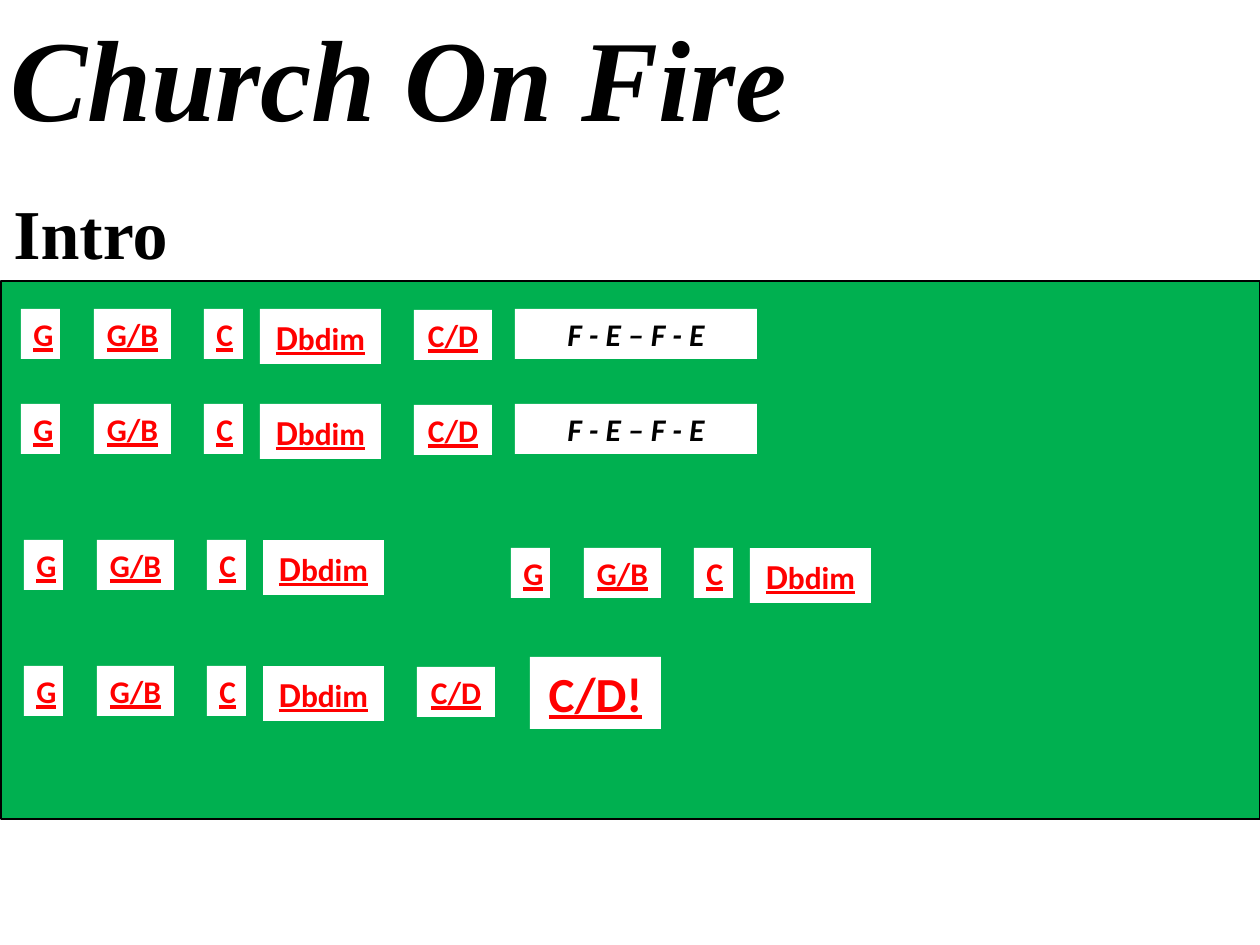
"""Build the chord chart slide for the intro of Church On Fire."""
from dataclasses import dataclass

from pptx import Presentation
from pptx import util as u
from pptx.dml.color import RGBColor
from pptx.enum import shapes, text


@dataclass(frozen=True)
class Theme:
    white: str = "FFFFFF"
    black: str = "000000"
    red: str = "FF0000"
    green: str = "00B050"
    heading_font: str = "Times New Roman"
    chord_font: str = "Calibri"
    title: int = 66
    section: int = 40
    accent: int = 28
    root: int = 20
    chord: int = 18


THEME = Theme()
EMU_PER_PX = 914400 / 126
SLIDE = (1260, 945)
PANEL = (1, 281, 1259, 538)
HEADINGS = [
    ("Church On Fire", (-2, 0, 1000, 152), THEME.title, True),
    ("Intro", (1, 183, 420, 97), THEME.section, False),
]
CHORDS = {
    "G": (0, 0, 39, 50),
    "G/B": (73, 0, 77, 50),
    "C": (183, 0, 39, 50),
    "Dbdim": (239, 0, 121, 55),
    "C/D": (393, 1, 78, 50),
    "F - E – F - E": (494, 0, 242, 50),
    "C/D!": (506, -9, 131, 72),
}
RUN_DOWN = "F - E – F - E"
PHRASE = ["G", "G/B", "C", "Dbdim"]
ROWS = [
    (21, 309, PHRASE + ["C/D", RUN_DOWN]),
    (21, 404, PHRASE + ["C/D", RUN_DOWN]),
    (24, 540, PHRASE),
    (511, 548, PHRASE),
    (24, 666, PHRASE + ["C/D", "C/D!"]),
]


def px(value):
    return u.Emu(round(value * EMU_PER_PX))


def add_box(slide, box, fill):
    shape = slide.shapes.add_shape(shapes.MSO_SHAPE.RECTANGLE, *map(px, box))
    shape.shadow.inherit = False
    shape.fill.solid()
    shape.fill.fore_color.rgb = RGBColor.from_string(fill)
    shape.line.fill.background()
    return shape


def add_label(slide, box, parts, font_name, color, align, italic=False, underline=False):
    frame = add_box(slide, box, THEME.white).text_frame
    frame.word_wrap = True
    frame.auto_size = text.MSO_AUTO_SIZE.SHAPE_TO_FIT_TEXT
    frame.vertical_anchor = text.MSO_ANCHOR.TOP
    paragraph = frame.paragraphs[0]
    paragraph.alignment = align
    for words, size in parts:
        run = paragraph.add_run()
        run.text = words
        run.font.name = font_name
        run.font.size = u.Pt(size)
        run.font.color.rgb = RGBColor.from_string(color)
        run.font.bold = True
        run.font.italic = italic
        run.font.underline = underline


def chord_parts(chord):
    if chord == "Dbdim":
        return [("D", THEME.root), ("bdim", THEME.chord)]
    return [(chord, THEME.accent if chord == "C/D!" else THEME.chord)]


def main():
    presentation = Presentation()
    presentation.slide_width, presentation.slide_height = map(px, SLIDE)
    slide = presentation.slides.add_slide(presentation.slide_layouts[6])

    panel = add_box(slide, PANEL, THEME.green)
    panel.line.color.rgb = RGBColor.from_string(THEME.black)
    panel.line.width = u.Pt(0.75)

    for words, box, size, italic in HEADINGS:
        add_label(slide, box, [(words, size)], THEME.heading_font, THEME.black,
                  text.PP_ALIGN.LEFT, italic=italic)

    for left, top, chords in ROWS:
        for chord in chords:
            dx, dy, width, height = CHORDS[chord]
            is_run = chord == RUN_DOWN
            add_label(slide, (left + dx, top + dy, width, height), chord_parts(chord),
                      THEME.chord_font, THEME.black if is_run else THEME.red,
                      text.PP_ALIGN.CENTER, italic=is_run, underline=not is_run)

    presentation.save("out.pptx")


if __name__ == "__main__":
    main()
